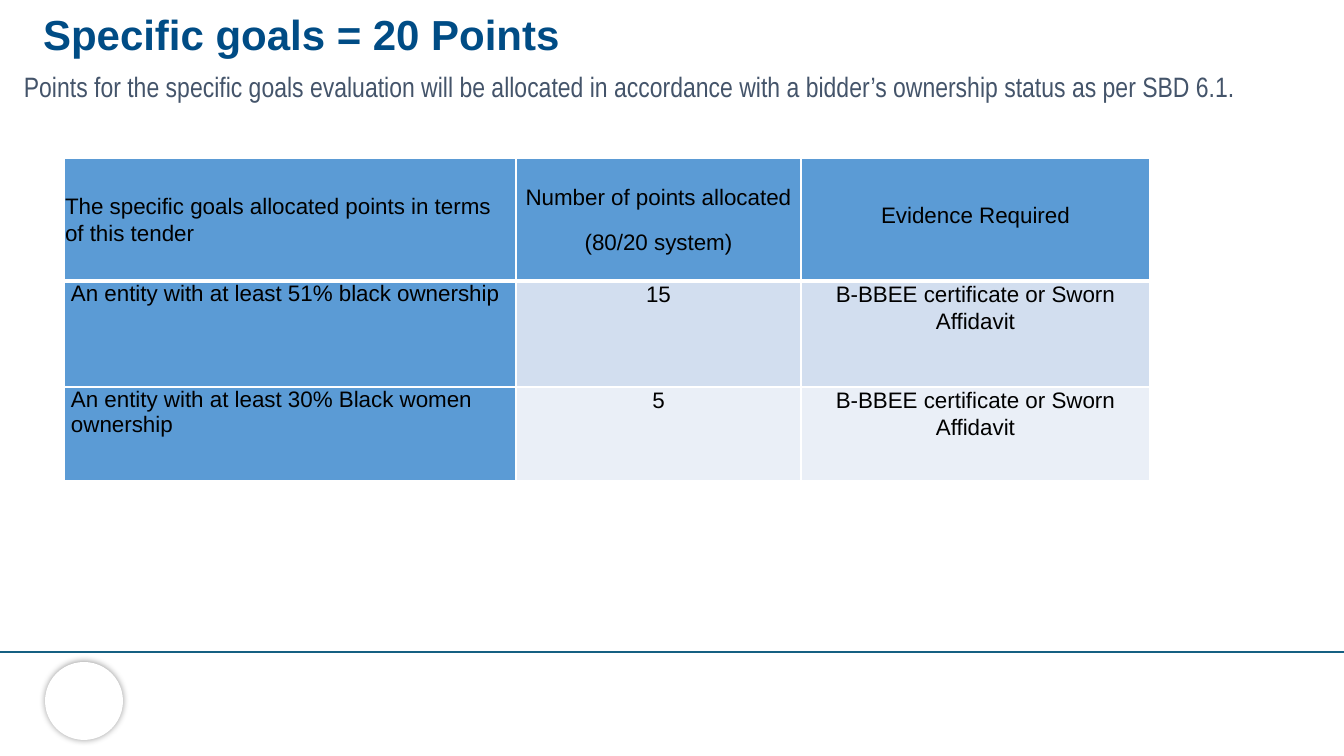
from lxml import etree
from pptx import Presentation
from pptx.dml.color import RGBColor
from pptx.enum.shapes import MSO_CONNECTOR, MSO_SHAPE
from pptx.enum.text import MSO_ANCHOR, MSO_AUTO_SIZE, PP_ALIGN
from pptx.oxml import parse_xml
from pptx.oxml.ns import nsdecls, qn
from pptx.util import Emu, Pt

LEFT, CENTER = PP_ALIGN.LEFT, PP_ALIGN.CENTER
TOP, MIDDLE = MSO_ANCHOR.TOP, MSO_ANCHOR.MIDDLE
NO_FIT = MSO_AUTO_SIZE.NONE

WHITE = RGBColor(0xFF, 0xFF, 0xFF)
BLACK = RGBColor(0x00, 0x00, 0x00)
NAVY = RGBColor(0x00, 0x4C, 0x85)
SLATE = RGBColor(0x44, 0x54, 0x6A)
TEAL = RGBColor(0x15, 0x60, 0x82)
BLUE = RGBColor(0x5B, 0x9B, 0xD5)
PALE = RGBColor(0xD2, 0xDE, 0xEF)
PALER = RGBColor(0xEA, 0xEF, 0xF7)


def px(*lengths):
    return [Emu(round(length * 914400 / 100.8)) for length in lengths]


def write(frame, lines, align, paragraph_format, font_format):
    frame.text = "\n".join(lines)
    for number, paragraph in enumerate(frame.paragraphs):
        paragraph.alignment = align
        for name, value in paragraph_format.items():
            if number or name != "space_before":
                setattr(paragraph, name, value)
        font = paragraph.runs[0].font
        for name, value in font_format.items():
            if name == "color":
                font.color.rgb = value
            else:
                setattr(font, name, value)


deck = Presentation()
deck.slide_width, deck.slide_height = px(1344, 756)
page = deck.slides.add_slide(deck.slide_layouts[5])

# Footer rule and disc
rule = page.shapes.add_connector(MSO_CONNECTOR.STRAIGHT, *px(1344, 652, 0, 652))
rule.line.color.rgb = TEAL
rule.line.width = Pt(1.5)
etree.SubElement(rule._element.spPr, qn("a:effectLst"))

disc = page.shapes.add_shape(MSO_SHAPE.OVAL, *px(45, 662, 78, 78))
disc.fill.solid()
disc.fill.fore_color.rgb = WHITE
disc.line.fill.background()
disc._element.spPr.append(parse_xml(
    f'<a:effectLst {nsdecls("a")}><a:outerShdw blurRad="63500" dist="0" dir="0">'
    '<a:srgbClr val="000000"><a:alpha val="40000"/></a:srgbClr>'
    '</a:outerShdw></a:effectLst>'))

# Title and introduction
title = page.shapes.title
intro = page.shapes.add_textbox(*px(14, 65, 1312, 44))
title.left, title.top, title.width, title.height = px(33, 3, 672, 61)
headings = [
    (title, "Specific goals = 20 Points",
     {"name": "Arial", "size": Pt(30), "bold": True, "color": NAVY}),
    (intro, "Points for the specific goals evaluation will be allocated in accordance "
            "with a bidder’s ownership status as per SBD 6.1.",
     {"name": "Arial Narrow", "size": Pt(20), "color": SLATE}),
]
for box, words, font_format in headings:
    frame = box.text_frame
    frame.word_wrap = True
    frame.auto_size = NO_FIT
    frame.vertical_anchor = TOP
    write(frame, [words], LEFT, {}, font_format)

# Points table
COLUMN_WIDTHS = [452, 285, 349]
ROW_HEIGHTS = [123, 106, 94]
ROW_FILLS = [BLUE, PALE, PALER]
EVIDENCE = ["B-BBEE certificate or Sworn Affidavit"]
ROWS = [
    [["The specific goals allocated points in terms of this tender"],
     ["Number of points allocated", "(80/20 system)"],
     ["Evidence Required"]],
    [["An entity with at least 51% black ownership"], ["15"], EVIDENCE],
    [["An entity with at least 30% Black women ownership"], ["5"], EVIDENCE],
]
SPACED = {"line_spacing": 1.07, "space_before": Pt(4.8), "space_after": Pt(8)}
CELL_FONT = {"name": "Arial", "size": Pt(16), "color": BLACK}

table = page.shapes.add_table(
    3, 3, *px(64, 158, sum(COLUMN_WIDTHS), sum(ROW_HEIGHTS))).table
for column, width in zip(table.columns, COLUMN_WIDTHS):
    column.width = px(width)[0]
for row, height in zip(table.rows, ROW_HEIGHTS):
    row.height = px(height)[0]

for row_number, row in enumerate(ROWS):
    for column_number, lines in enumerate(row):
        cell = table.cell(row_number, column_number)
        is_header = row_number == 0
        is_goal = column_number == 0
        side = 1 if is_header or column_number == 2 else 7
        bottom = 10 if is_header and column_number == 2 else 0
        (cell.margin_left, cell.margin_right,
         cell.margin_top, cell.margin_bottom) = px(side, side, 0, bottom)
        cell.vertical_anchor = MIDDLE if is_header else TOP
        heavy_edge = {0: "B", 1: "T"}.get(row_number)
        for edge in "LRTB":
            width = Pt(3 if edge == heavy_edge else 1)
            cell._tc.get_or_add_tcPr().append(parse_xml(
                f'<a:ln{edge} {nsdecls("a")} w="{width}"><a:solidFill>'
                f'<a:srgbClr val="{WHITE}"/></a:solidFill></a:ln{edge}>'))
        cell.fill.solid()
        cell.fill.fore_color.rgb = BLUE if is_goal else ROW_FILLS[row_number]
        write(cell.text_frame, lines, LEFT if is_goal else CENTER,
              {} if is_goal and not is_header else SPACED, CELL_FONT)

deck.save("out.pptx")
